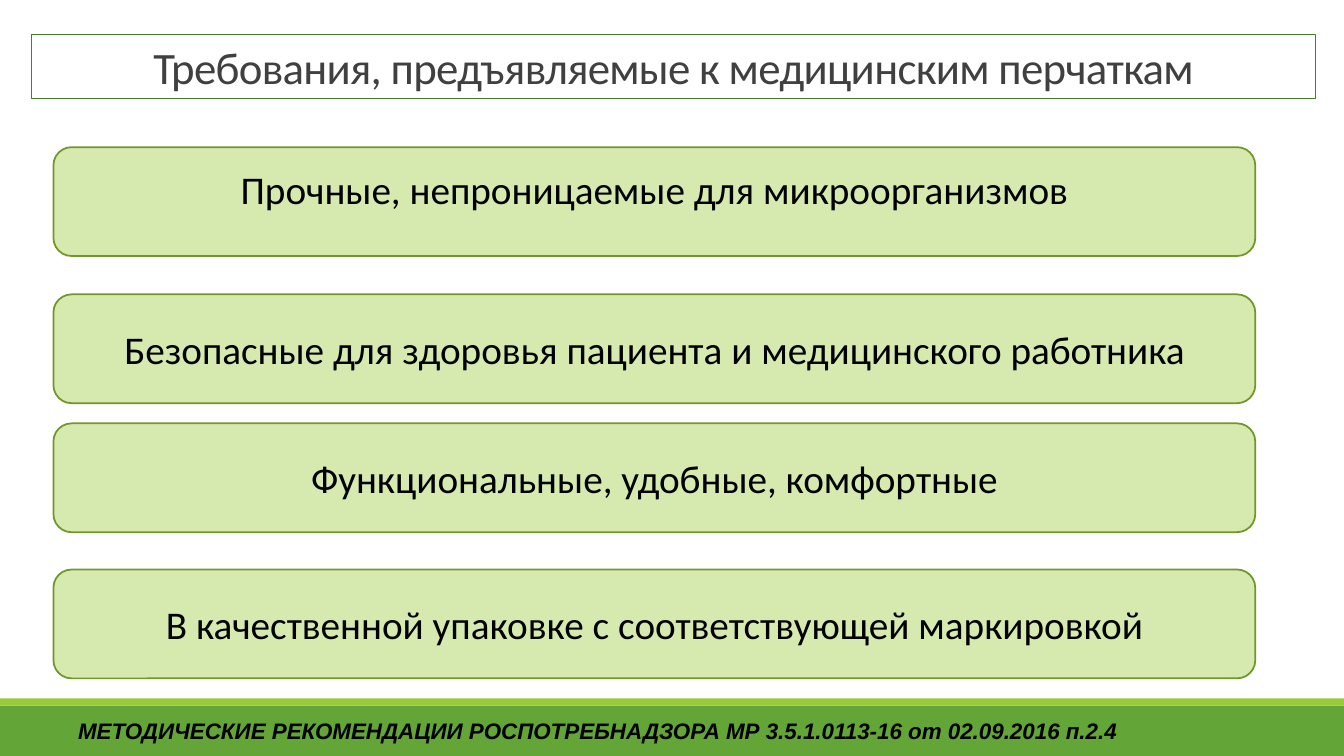
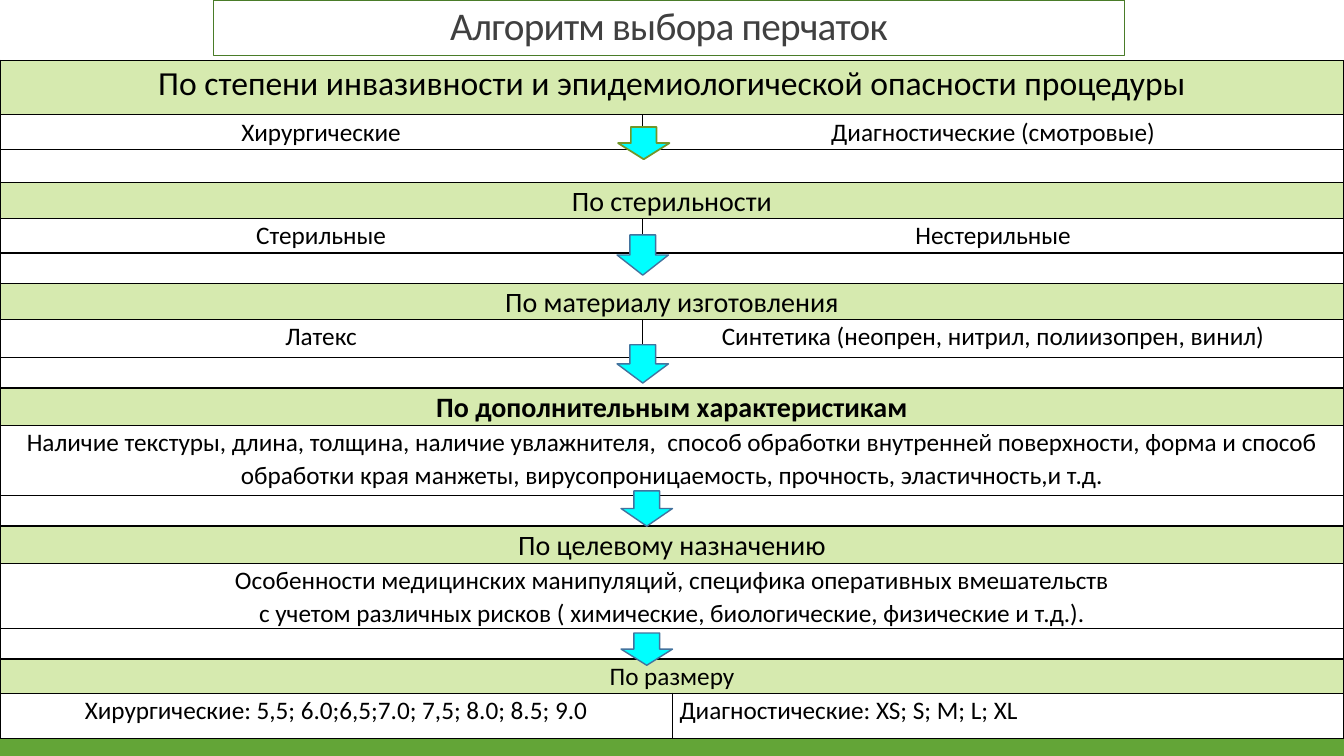
"""Build two slides on medical glove requirements and glove selection."""
from pptx import Presentation, util as u
from pptx.dml.color import RGBColor
from pptx.enum import shapes, text
from pptx.oxml import parse_xml
from pptx.oxml.ns import nsdecls

BLACK = RGBColor(0x00, 0x00, 0x00)
WHITE = RGBColor(0xFF, 0xFF, 0xFF)
TITLE_GRAY = RGBColor(0x40, 0x40, 0x40)
TITLE_EDGE = RGBColor(0x4A, 0x7C, 0x29)
BAND_GREEN = RGBColor(0x63, 0xA5, 0x37)
STRIPE_LIME = RGBColor(0x99, 0xCB, 0x38)
PALE_GREEN = RGBColor(0xD6, 0xEA, 0xAF)
OLIVE = RGBColor(0x71, 0x96, 0x29)
CYAN = RGBColor(0x00, 0xFF, 0xFF)
STEEL_BLUE = RGBColor(0x43, 0x73, 0x9E)

SLIDE_WIDTH, SLIDE_HEIGHT = 13.33, 7.5
CENTER, LEFT = text.PP_ALIGN.CENTER, text.PP_ALIGN.LEFT
TOP, MIDDLE = text.MSO_ANCHOR.TOP, text.MSO_ANCHOR.MIDDLE
BODY_FONT = {"name": "Calibri", "bold": False, "italic": False}
FOOTER_FONT = {"name": "Arial", "bold": True, "italic": True}
CELL_MARGINS = {"margin_left": 0.07, "margin_right": 0.07,
                "margin_top": 0, "margin_bottom": 0}

REQUIREMENTS = [
    (1.46, "Прочные, непроницаемые для микроорганизмов", 0.3),
    (2.92, "Безопасные для здоровья пациента и медицинского работника", 0.05),
    (4.2, "Функциональные, удобные, комфортные", 0.05),
    (5.65, "В качественной упаковке с соответствующей маркировкой", 0.05),
]
COLUMNS = [6.37, 0.3, 6.66]
HEADING, DETAIL, GAP = "heading", "detail", "gap"
SELECTION_ROWS = [
    (HEADING, 0.54, 24, ["По степени инвазивности и эпидемиологической опасности процедуры"]),
    (DETAIL, 0.34, 18, ["Хирургические", "Диагностические (смотровые)"]),
    (GAP, 0.33, 12, [""]),
    (HEADING, 0.36, 20, ["По стерильности"]),
    (DETAIL, 0.34, 18, ["Стерильные", "Нестерильные"]),
    (GAP, 0.3, 12, [""]),
    (HEADING, 0.36, 20, ["По материалу изготовления"]),
    (DETAIL, 0.38, 18, ["Латекс", "Синтетика (неопрен, нитрил, полиизопрен, винил)"]),
    (GAP, 0.3, 12, [""]),
    (HEADING, 0.37, 20, ["По дополнительным характеристикам"]),
    (DETAIL, 0.7, 18, [
        "Наличие текстуры, длина, толщина, наличие увлажнителя,  способ обработки "
        "внутренней поверхности, форма и способ обработки края манжеты, "
        "вирусопроницаемость, прочность, эластичность,и т.д."]),
    (GAP, 0.3, 12, [""]),
    (HEADING, 0.37, 20, ["По целевому назначению"]),
    (DETAIL, 0.65, 18, [
        "Особенности медицинских манипуляций, специфика оперативных вмешательств\n"
        "с учетом различных рисков ( химические, биологические, физические и т.д.)."]),
    (GAP, 0.3, 12, [""]),
    (HEADING, 0.34, 18, ["По размеру"]),
    (DETAIL, 0.45, 18, ["Хирургические: 5,5; 6.0;6,5;7.0; 7,5; 8.0; 8.5; 9.0",
                        "Диагностические: XS; S; M; L; XL"]),
]
BOLD_HEADING = "По дополнительным характеристикам"
SIZES_ROW = len(SELECTION_ROWS) - 1
ARROWS = [
    (6.13, 1.26, 0.32, OLIVE, 1.25),
    (6.12, 2.33, 0.4, STEEL_BLUE, 1),
    (6.12, 3.42, 0.38, STEEL_BLUE, 1),
    (6.16, 4.87, 0.35, STEEL_BLUE, 1),
    (6.16, 6.28, 0.32, STEEL_BLUE, 1),
]


def apply_format(target, values):
    """Set every attribute named in a dict of format values."""
    for name, value in values.items():
        setattr(target, name, value)


def write_text(frame, words, size, color=BLACK, font=BODY_FONT, align=CENTER,
               line_spacing=None, tracking=None):
    """Write one paragraph per line of words in a single format."""
    for index, line in enumerate(words.split("\n")):
        paragraph = frame.add_paragraph() if index else frame.paragraphs[0]
        apply_format(paragraph, {"alignment": align, "line_spacing": line_spacing})
        run = paragraph.add_run()
        run.text = line
        apply_format(run.font, {**font, "size": u.Pt(size)})
        run.font.color.rgb = color
        if tracking is not None:
            run.font._element.set("spc", str(tracking))


def add_block(slide, preset, box, fill=None, edge=None, edge_width=1):
    """Add a flat preset shape with an optional fill and outline."""
    block = slide.shapes.add_shape(preset, *map(u.Inches, box))
    block.shadow.inherit = False
    if fill is None:
        block.fill.background()
    else:
        block.fill.solid()
        block.fill.fore_color.rgb = fill
    if edge is None:
        block.line.fill.background()
    else:
        block.line.color.rgb = edge
        block.line.width = u.Pt(edge_width)
    return block


def add_bands(slide):
    """Add the green bands at the foot of a slide."""
    for top, height, fill in ((7, 0.5, BAND_GREEN), (6.93, 0.07, STRIPE_LIME)):
        add_block(slide, shapes.MSO_SHAPE.RECTANGLE, (0, top, SLIDE_WIDTH, height), fill)


def add_title(slide, box, words, size, anchor, line_spacing=None):
    """Add the outlined title."""
    title = add_block(slide, shapes.MSO_SHAPE.RECTANGLE, box, edge=TITLE_EDGE, edge_width=0.75)
    apply_format(title.text_frame, {"word_wrap": True, "vertical_anchor": anchor})
    write_text(title.text_frame, words, size, TITLE_GRAY,
               line_spacing=line_spacing, tracking=-50)


def add_requirement(slide, top, words, bottom_margin):
    """Add one rounded requirement card."""
    card = add_block(slide, shapes.MSO_SHAPE.ROUNDED_RECTANGLE, (0.53, top, 11.92, 1.08),
                     PALE_GREEN, OLIVE, 1.25)
    apply_format(card.text_frame, {"word_wrap": True, "vertical_anchor": MIDDLE,
                                   "margin_bottom": u.Inches(bottom_margin)})
    write_text(card.text_frame, words, 28)


def add_reference(slide, words):
    """Add the source reference over the bottom band."""
    reference = slide.shapes.add_textbox(*map(u.Inches, (-0.23, 7.07, 12.32, 0.37)))
    reference.text_frame.word_wrap = True
    write_text(reference.text_frame, words, 16, font=FOOTER_FONT)


def style_cell(cell, fill):
    """Give a cell its borders, fill and margins."""
    properties = cell._tc.get_or_add_tcPr()
    for side in ("lnL", "lnR", "lnT", "lnB"):
        properties.append(parse_xml(
            f'<a:{side} {nsdecls("a")} w="12700"><a:solidFill>'
            f'<a:srgbClr val="{BLACK}"/></a:solidFill></a:{side}>'))
    cell.fill.solid()
    cell.fill.fore_color.rgb = fill
    apply_format(cell, {name: u.Inches(value) for name, value in CELL_MARGINS.items()})


def fill_cell(cell, words, size, align):
    """Write a cell's text, or shrink the line of an empty cell."""
    if words:
        font = {**BODY_FONT, "bold": words == BOLD_HEADING}
        write_text(cell.text_frame, words, size, font=font, align=align, line_spacing=1.07)
    else:
        cell.text_frame.paragraphs[0]._p.append(
            parse_xml(f'<a:endParaRPr {nsdecls("a")} sz="{size * 100}"/>'))


def add_selection_table(slide):
    """Add the table of selection steps."""
    height = sum(row[1] for row in SELECTION_ROWS)
    table = slide.shapes.add_table(
        len(SELECTION_ROWS), len(COLUMNS),
        *map(u.Inches, (0, 0.6, SLIDE_WIDTH, height))).table
    apply_format(table, {"first_row": False, "horz_banding": False})
    for column, width in zip(table.columns, COLUMNS):
        column.width = u.Inches(width)
    last = len(COLUMNS) - 1
    for index, (kind, row_height, size, entries) in enumerate(SELECTION_ROWS):
        table.rows[index].height = u.Inches(row_height)
        for column in range(len(COLUMNS)):
            style_cell(table.cell(index, column), PALE_GREEN if kind == HEADING else WHITE)
        split = 2 if index == SIZES_ROW else 1
        spans = [(0, last)] if len(entries) == 1 else [(0, split - 1), (split, last)]
        for (start, end), words in zip(spans, entries):
            cell = table.cell(index, start)
            if end > start:
                cell.merge(table.cell(index, end))
            align = LEFT if index == SIZES_ROW and start else CENTER
            fill_cell(cell, words, size, align)


def build_requirements(slide):
    """Build the slide of glove requirements."""
    add_bands(slide)
    add_title(slide, (0.31, 0.34, 12.74, 0.64),
              "Требования, предъявляемые к медицинским перчаткам", 32, TOP)
    for requirement in REQUIREMENTS:
        add_requirement(slide, *requirement)
    add_reference(slide, "МЕТОДИЧЕСКИЕ РЕКОМЕНДАЦИИ РОСПОТРЕБНАДЗОРА "
                         "МР 3.5.1.0113-16 от 02.09.2016 п.2.4")


def build_selection(slide):
    """Build the slide of the glove selection algorithm."""
    add_bands(slide)
    add_selection_table(slide)
    for left, top, height, edge, edge_width in ARROWS:
        add_block(slide, shapes.MSO_SHAPE.DOWN_ARROW, (left, top, 0.51, height),
                  CYAN, edge, edge_width)
    add_title(slide, (2.12, 0, 9.03, 0.55), "Алгоритм выбора перчаток", 28, MIDDLE, 0.9)


def main():
    """Build and save the presentation."""
    deck = Presentation()
    apply_format(deck, {"slide_width": u.Inches(SLIDE_WIDTH),
                        "slide_height": u.Inches(SLIDE_HEIGHT)})
    for build in (build_requirements, build_selection):
        build(deck.slides.add_slide(deck.slide_layouts[6]))
    deck.save("out.pptx")


if __name__ == "__main__":
    main()
